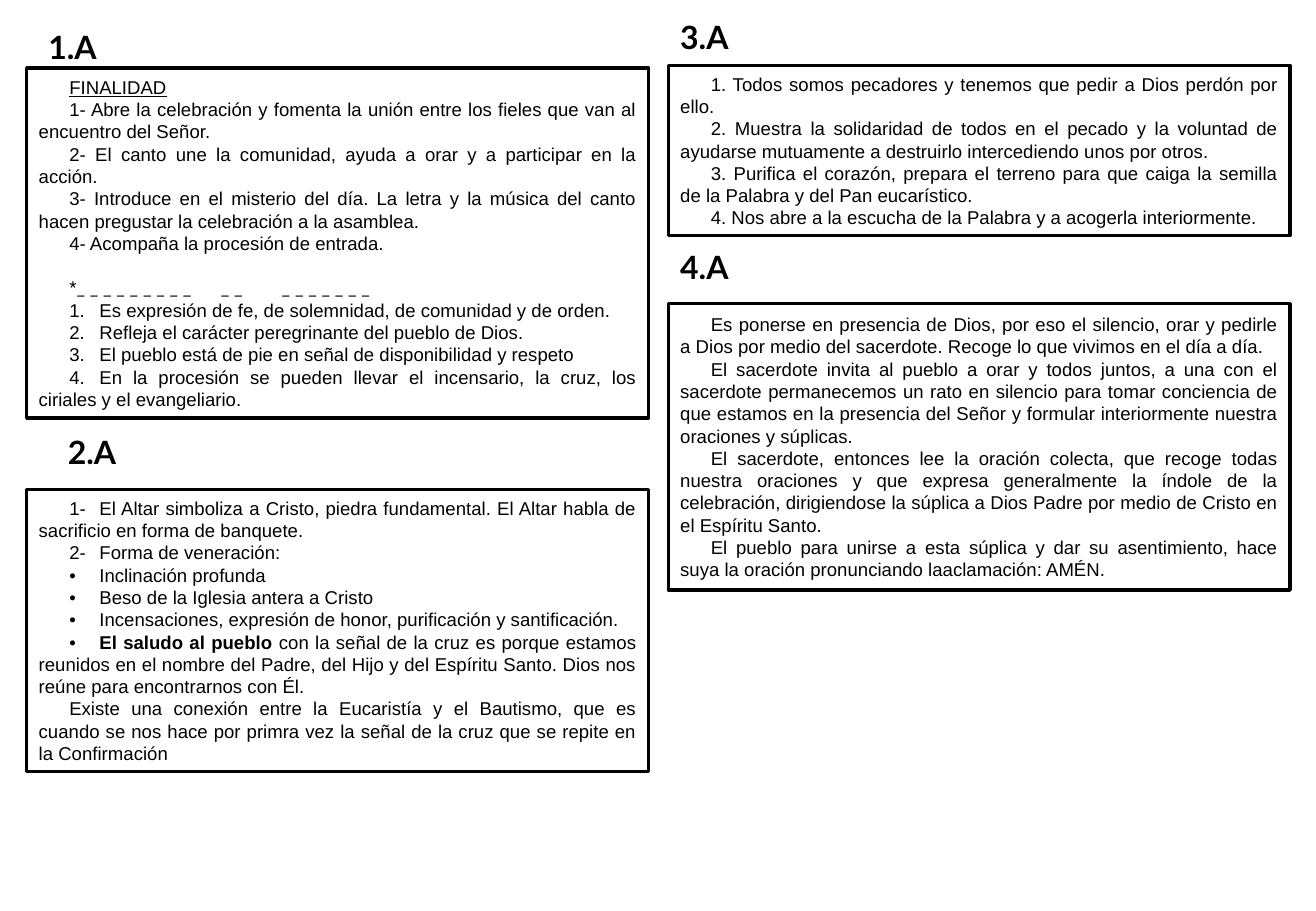
"""Build a four-part handout slide on the opening rites of the Mass."""
from dataclasses import dataclass, field
from typing import Any

from lxml import etree
from pptx import Presentation
from pptx import util as u
from pptx.dml.color import RGBColor
from pptx.enum import shapes, text
from pptx.oxml.ns import qn

BLACK = RGBColor(0x00, 0x00, 0x00)
COLUMN_WIDTH = 13
LEFT_COLUMN = 0.56
RIGHT_COLUMN = 13.97
FIRST_LINE_INDENT = 0.64
NUMBER_TAB = (1.61,)
DASH_TAB = (1.52,)
BULLET_TAB = (1.42,)
SHORT_BULLET_TAB = (1.19,)
DASHES_TABS = (3.6, 4.44)

BODY_FONT = {"name": "Arial", "size": u.Pt(11)}
TITLE_FONT = {"name": "Lato", "size": u.Pt(19), "bold": True}
BODY_PARA = {"alignment": text.PP_ALIGN.JUSTIFY, "line_spacing": u.Pt(13.2)}
FRAME = {"word_wrap": True, "auto_size": text.MSO_AUTO_SIZE.SHAPE_TO_FIT_TEXT}


@dataclass
class Span:
    words: str
    font: dict[str, Any] = field(default_factory=dict)


@dataclass
class Para:
    spans: list[Span]
    tabs: tuple[float, ...] = ()
    format: dict[str, Any] = field(default_factory=dict)


@dataclass
class Section:
    title: str
    title_left: float
    title_top: float
    left: float
    top: float
    height: float
    paras: list[Para]


def plain(words: str, tabs: tuple[float, ...] = ()) -> Para:
    return Para([Span(words)], tabs)


SECTIONS = [
    Section("1.A", 0.76, 0.46, LEFT_COLUMN, 1.42, 7.32, [
        Para([Span("FINALIDAD", {"underline": True})]),
        plain("1- Abre la celebración y fomenta la unión entre los fieles que van al encuentro del Señor."),
        plain("2- El canto une la comunidad, ayuda a orar y a participar en la acción."),
        plain("3- Introduce en el misterio del día. La letra y la música del canto hacen pregustar "
              "la celebración a la asamblea."),
        plain("4- Acompaña la procesión de entrada."),
        Para([Span("*"), Span("_ _ _ _ _ _ _ _ _\t_ _\t_ _ _ _ _ _ _", {"name": "Lato"})],
             DASHES_TABS, {"space_before": u.Pt(13.2)}),
        plain("1.\tEs expresión de fe, de solemnidad, de comunidad y de orden.", NUMBER_TAB),
        plain("2.\tRefleja el carácter peregrinante del pueblo de Dios.", NUMBER_TAB),
        plain("3.\tEl pueblo está de pie en señal de disponibilidad y respeto", NUMBER_TAB),
        plain("4.\tEn la procesión se pueden llevar el incensario, la cruz, los ciriales y el evangeliario.",
              NUMBER_TAB),
    ]),
    Section("2.A", 1.17, 8.92, LEFT_COLUMN, 10.24, 5.89, [
        plain("1-\tEl Altar simboliza a Cristo, piedra fundamental. El Altar habla de sacrificio "
              "en forma de banquete.", DASH_TAB),
        plain("2-\tForma de veneración:", DASH_TAB),
        plain("•\tInclinación profunda", BULLET_TAB),
        plain("•\tBeso de la Iglesia antera a Cristo", BULLET_TAB),
        plain("•\tIncensaciones, expresión de honor, purificación y santificación.", BULLET_TAB),
        Para([Span("•\t"), Span("El saludo al pueblo ", {"bold": True}),
              Span("con la señal de la cruz es porque estamos reunidos en el nombre del Padre, del Hijo "
                   "y del Espíritu Santo. Dios nos reúne para encontrarnos con Él.")], SHORT_BULLET_TAB),
        plain("Existe una conexión entre la Eucaristía y el Bautismo, que es cuando se nos hace por primra "
              "vez la señal de la cruz que se repite en la Confirmación"),
    ]),
    Section("3.A", RIGHT_COLUMN, 0.25, RIGHT_COLUMN, 1.37, 3.56, [
        plain("1. Todos somos pecadores y tenemos que pedir a Dios perdón por ello."),
        plain("2. Muestra la solidaridad de todos en el pecado y la voluntad de ayudarse mutuamente "
              "a destruirlo intercediendo unos por otros."),
        plain("3. Purifica el corazón, prepara el terreno para que caiga la semilla de la Palabra "
              "y del Pan eucarístico."),
        plain("4. Nos abre a la escucha de la Palabra y a acogerla interiormente."),
    ]),
    Section("4.A", RIGHT_COLUMN, 5.05, RIGHT_COLUMN, 6.35, 5.99, [
        plain("Es ponerse en presencia de Dios, por eso el silencio, orar y pedirle a Dios por medio "
              "del sacerdote. Recoge lo que vivimos en el día a día."),
        plain("El sacerdote invita al pueblo a orar y todos juntos, a una con el sacerdote permanecemos "
              "un rato en silencio para tomar conciencia de que estamos en la presencia del Señor "
              "y formular interiormente nuestra oraciones y súplicas."),
        plain("El sacerdote, entonces lee la oración colecta, que recoge todas nuestra oraciones y que "
              "expresa generalmente la índole de la celebración, dirigiendose la súplica a Dios Padre "
              "por medio de Cristo en el Espíritu Santo."),
        plain("El pueblo para unirse a esta súplica y dar su asentimiento, hace suya la oración "
              "pronunciando laaclamación: AMÉN."),
    ]),
]


def apply(target: Any, values: dict[str, Any]) -> None:
    for name, value in values.items():
        setattr(target, name, value)


def add_span(para: Any, words: str, font: dict[str, Any]) -> None:
    span = para.add_run()
    span.text = words
    apply(span.font, font)
    span.font.color.rgb = BLACK


def write_para(para: Any, content: Para) -> None:
    apply(para, BODY_PARA | content.format)
    properties = para._p.get_or_add_pPr()
    properties.set("marL", "0")
    properties.set("indent", str(u.Cm(FIRST_LINE_INDENT)))
    if content.tabs:
        tab_list = etree.SubElement(properties, qn("a:tabLst"))
        for position in content.tabs:
            etree.SubElement(tab_list, qn("a:tab"), pos=str(u.Cm(position)), algn="l")
    for span in content.spans:
        add_span(para, span.words, BODY_FONT | span.font)


def draw_body(page: Any, section: Section) -> None:
    box = page.shapes.add_shape(shapes.MSO_SHAPE.RECTANGLE, u.Cm(section.left), u.Cm(section.top),
                                u.Cm(COLUMN_WIDTH), u.Cm(section.height))
    box.shadow.inherit = False
    box.fill.background()
    box.line.color.rgb = BLACK
    box.line.width = u.Pt(2)
    frame = box.text_frame
    apply(frame, FRAME | {"vertical_anchor": text.MSO_ANCHOR.MIDDLE})
    for index, content in enumerate(section.paras):
        write_para(frame.add_paragraph() if index else frame.paragraphs[0], content)


def draw_title(page: Any, section: Section) -> None:
    box = page.shapes.add_textbox(u.Cm(section.title_left), u.Cm(section.title_top), u.Cm(2), u.Cm(1.07))
    apply(box.text_frame, FRAME)
    add_span(box.text_frame.paragraphs[0], section.title, TITLE_FONT)


def main() -> None:
    deck = Presentation()
    apply(deck, {"slide_width": u.Cm(27.51), "slide_height": u.Cm(19.05)})
    page = deck.slides.add_slide(deck.slide_layouts[6])
    for section in SECTIONS:
        draw_body(page, section)
        draw_title(page, section)
    deck.save("out.pptx")


if __name__ == "__main__":
    main()
